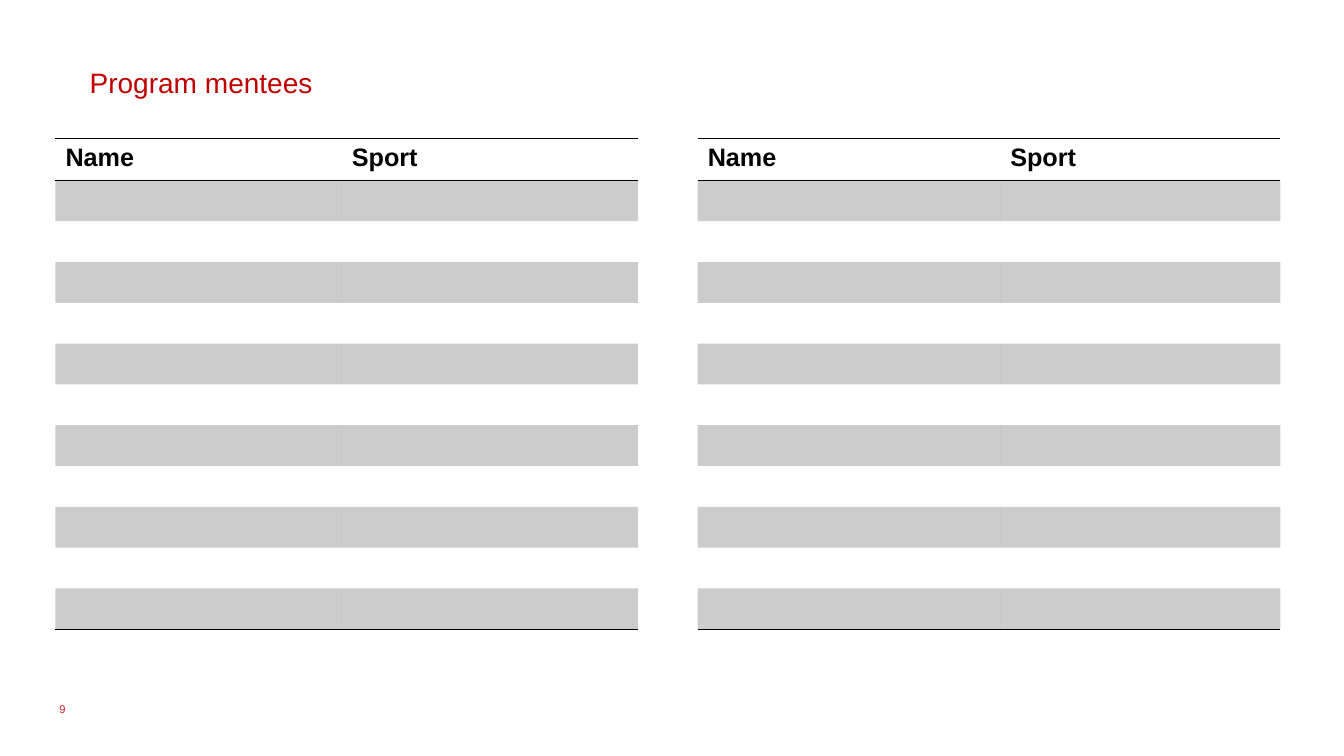
from dataclasses import dataclass

from lxml import etree
from pptx import Presentation
from pptx.dml.color import RGBColor
from pptx.enum.text import MSO_ANCHOR, MSO_AUTO_SIZE
from pptx.oxml.ns import qn
from pptx.slide import Slide
from pptx.table import _Cell
from pptx.text.text import _Paragraph
from pptx.util import Inches, Pt

TOP, MIDDLE = MSO_ANCHOR.TOP, MSO_ANCHOR.MIDDLE
GROW, FIXED = MSO_AUTO_SIZE.SHAPE_TO_FIT_TEXT, MSO_AUTO_SIZE.NONE
COLORS = {"title": "C00000", "ink": "000000", "number": "DA2127"}
FONT = "Arial"
PLAIN_STYLE = "{2D5ABB26-0587-4C30-8999-92F81FD0307C}"
BAND_OPACITY = 20
HEADINGS = ("Name", "Sport")
ROW_COUNT = 12
HEADER_HEIGHT, ROW_HEIGHT = 0.42, 0.405
TABLE_TOP = 1.37


@dataclass(frozen=True)
class Label:
    text: str
    left: float
    top: float
    width: float
    height: float
    size: int
    color: str
    anchor: MSO_ANCHOR = TOP
    auto_size: MSO_AUTO_SIZE = FIXED
    line_spacing: float = 1.0


@dataclass(frozen=True)
class Roster:
    left: float
    column_widths: tuple[float, float]


LABELS = (
    Label("Program mentees", 0.79, 0.58, 11.49, 0.43, 20, "title",
          auto_size=GROW, line_spacing=1.07),
    Label("9", 0.49, 6.83, 3, 0.4, 8, "number", anchor=MIDDLE),
)
ROSTERS = (Roster(0.55, (2.84, 2.94)), Roster(6.92, (3, 2.78)))


def style_font(para: _Paragraph, size: int, color: str, bold: bool = False) -> None:
    para.font.name = FONT
    para.font.size = Pt(size)
    para.font.bold = bold
    para.font.color.rgb = RGBColor.from_string(COLORS[color])


def add_label(page: Slide, label: Label) -> None:
    box = page.shapes.add_textbox(Inches(label.left), Inches(label.top),
                                  Inches(label.width), Inches(label.height))
    frame = box.text_frame
    frame.word_wrap = True
    frame.auto_size = label.auto_size
    frame.vertical_anchor = label.anchor
    para = frame.paragraphs[0]
    para.text = label.text
    para.line_spacing = label.line_spacing
    style_font(para, label.size, label.color)


def set_borders(cell: _Cell, ruled: set[str]) -> None:
    """Rule the named sides in ink and clear the other sides."""
    properties = cell._tc.get_or_add_tcPr()
    for side in ("lnL", "lnR", "lnT", "lnB"):
        line = etree.SubElement(properties, qn(f"a:{side}"), w=str(Pt(1)))
        if side in ruled:
            fill = etree.SubElement(line, qn("a:solidFill"))
            etree.SubElement(fill, qn("a:srgbClr"), val=COLORS["ink"])
        else:
            etree.SubElement(line, qn("a:noFill"))


def fill_band(cell: _Cell) -> None:
    cell.fill.solid()
    cell.fill.fore_color.rgb = RGBColor.from_string(COLORS["ink"])
    color = cell._tc.tcPr.find(f"{qn('a:solidFill')}/{qn('a:srgbClr')}")
    etree.SubElement(color, qn("a:alpha"), val=str(BAND_OPACITY * 1000))


def add_roster(page: Slide, roster: Roster) -> None:
    height = HEADER_HEIGHT + (ROW_COUNT - 1) * ROW_HEIGHT
    frame = page.shapes.add_table(
        ROW_COUNT, len(HEADINGS), Inches(roster.left), Inches(TABLE_TOP),
        Inches(sum(roster.column_widths)), Inches(height))
    table = frame.table
    table.first_row = table.horz_banding = False
    frame._element.find(f".//{qn('a:tableStyleId')}").text = PLAIN_STYLE
    for column, width in zip(table.columns, roster.column_widths):
        column.width = Inches(width)

    for index, row in enumerate(table.rows):
        row.height = Inches(ROW_HEIGHT if index else HEADER_HEIGHT)
        for cell, heading in zip(row.cells, HEADINGS):
            ruled = set()
            if index == 0:
                ruled = {"lnT", "lnB"}
                cell.text = heading
            elif index == 1:
                ruled = {"lnT"}
            elif index == ROW_COUNT - 1:
                ruled = {"lnB"}
            style_font(cell.text_frame.paragraphs[0], 18, "ink", bold=index == 0)
            set_borders(cell, ruled)
            if index % 2:
                fill_band(cell)
            else:
                cell.fill.background()


def main() -> None:
    deck = Presentation()
    deck.slide_width, deck.slide_height = Inches(13.33), Inches(7.5)
    page = deck.slides.add_slide(deck.slide_layouts[6])
    for label in LABELS:
        add_label(page, label)
    for roster in ROSTERS:
        add_roster(page, roster)
    deck.save("out.pptx")


if __name__ == "__main__":
    main()
